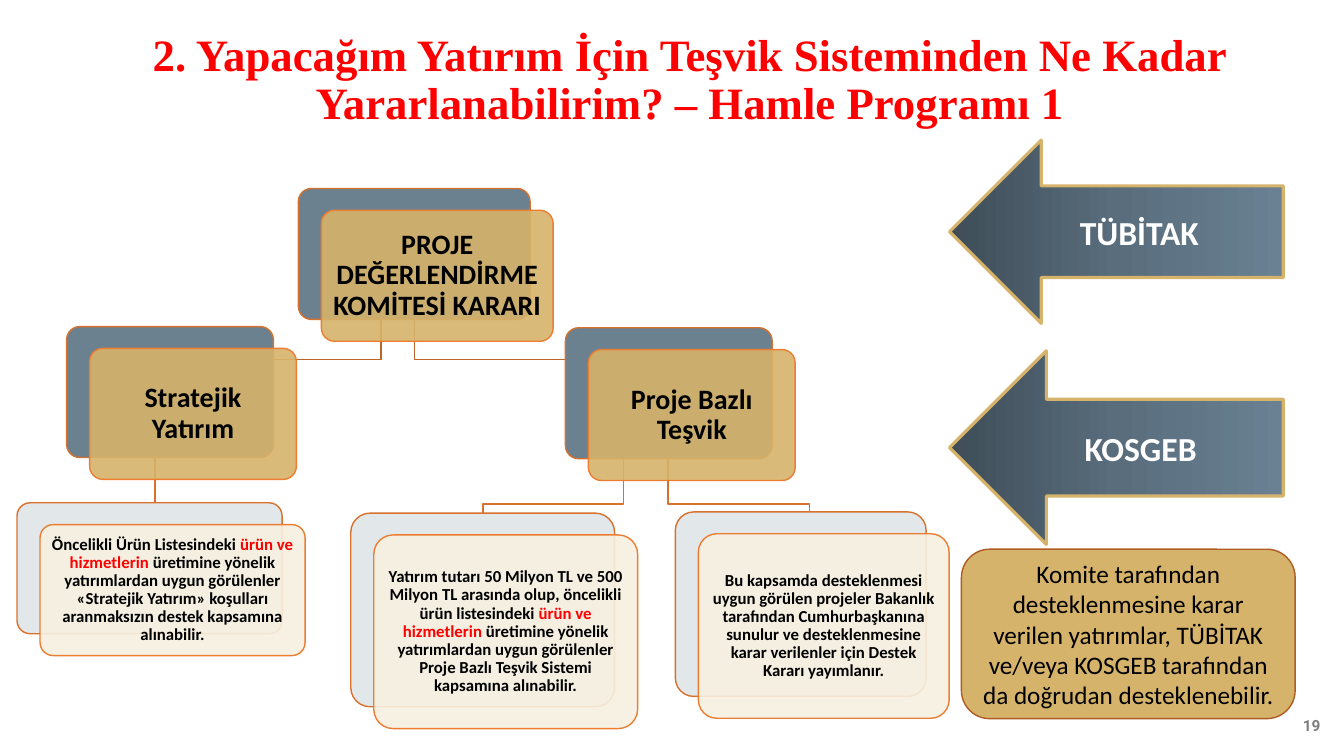
import copy
import pptx
import pptx.dml.color
import pptx.enum.shapes
import pptx.enum.text
import pptx.oxml
import pptx.oxml.ns
import pptx.util

Cm, Pt = pptx.util.Cm, pptx.util.Pt
Shape = pptx.enum.shapes.MSO_SHAPE
Align = pptx.enum.text.PP_ALIGN


class Theme:
    title_font, body_font, number_font = "Times New Roman", "Calibri", "Roboto"
    title_size, arrow_size, heading_size = 32, 24, 20
    note_size, detail_size, number_size = 18, 12, 11
    black, white, red, grey = "000000", "FFFFFF", "FF0000", "7F7F7F"
    slate, gold, pale_slate, cream = "6C8190", "D6B36A", "E2E7EA", "F7F0E1"
    back_line, front_line, note_line = "D7712C", "ED7D31", "AF5C24"
    root_link, branch_link = "BE6427", "D7712C"
    arrow_stops = [(0, "3E4D57"), (0.5, "596D7C"), (1, "698193")]


# Content: lengths in cm, boxes as left, top, width, height
TITLE = "2. Yapacağım Yatırım İçin Teşvik Sisteminden Ne Kadar Yararlanabilirim? – Hamle Programı 1"
PAGE_NUMBER = "19"
HIGHLIGHT = ("ürün ve hizmetlerin ", Theme.red)
HEADINGS = [
    ((7.52, 4.75, 5.84, 3.3), ["PROJE DEĞERLENDİRME KOMİTESİ KARARI"]),
    ((1.68, 8.23, 5.21, 3.3), ["Stratejik Yatırım"]),
    ((14.25, 8.26, 5.21, 3.3), ["Proje Bazlı Teşvik"]),
]
DETAILS = [
    ((0.43, 12.67, 6.68, 3.3), [
        "Öncelikli Ürün Listesindeki ", HIGHLIGHT,
        "üretimine yönelik yatırımlardan uygun görülenler «Stratejik Yatırım» "
        "koşulları aranmaksızın destek kapsamına alınabilir."]),
    ((8.84, 12.93, 6.65, 4.88), [
        "Yatırım tutarı 50 Milyon TL ve 500 Milyon TL arasında olup, öncelikli ürün listesindeki ",
        HIGHLIGHT,
        "üretimine yönelik yatırımlardan uygun görülenler Proje Bazlı Teşvik "
        "Sistemi kapsamına alınabilir."]),
    ((17.02, 12.9, 6.32, 4.65), [
        "Bu kapsamda desteklenmesi uygun görülen projeler Bakanlık tarafından "
        "Cumhurbaşkanına sunulur ve desteklenmesine karar verilenler için "
        "Destek Kararı yayımlanır."]),
]
# Links: start x, end x, start y, colour
LINKS = [
    (16.84, 20.4, 11.56, Theme.branch_link),
    (15.72, 12.17, 11.56, Theme.branch_link),
    (10.44, 15.75, 7.92, Theme.root_link),
    (9.6, 4.27, 7.92, Theme.root_link),
]
LINK_DROP, LINK_END = 1.14, 1.7
STRAIGHT_LINK = (3.91, 11.53, 3.91, 12.7)
CARD_SHIFT_X, CARD_SHIFT_Y = 0.58, 0.55
ARROWS = [
    ((23.93, 3.53, 8.41, 4.62), "TÜBİTAK"),
    ((23.93, 8.84, 8.41, 4.88), "KOSGEB"),
]
NOTE_PLACE = (24.23, 13.84, 8.41, 4.27)
NOTE = ("Komite tarafından desteklenmesine karar verilen yatırımlar, TÜBİTAK "
        "ve/veya KOSGEB tarafından da doğrudan desteklenebilir.")


def rgb(code):
    return pptx.dml.color.RGBColor.from_string(code)


def write(shape, pieces, size, color=Theme.black, font=Theme.body_font, bold=True,
          align=Align.CENTER, spacing=None, inset=None):
    """Write plain strings or (string, colour) pairs as one paragraph."""
    frame = shape.text_frame
    frame.word_wrap = True
    frame.vertical_anchor = pptx.enum.text.MSO_ANCHOR.MIDDLE
    if inset is not None:
        frame.margin_left = frame.margin_right = Cm(inset)
        frame.margin_top = frame.margin_bottom = Cm(inset)
    para = frame.paragraphs[0]
    para.alignment = align
    if spacing:
        para.line_spacing = spacing
    for piece in pieces:
        words, tint = (piece, color) if isinstance(piece, str) else piece
        span = para.add_run()
        span.text = words
        span.font.name, span.font.size, span.font.bold = font, Pt(size), bold
        span.font.color.rgb = rgb(tint)


def add_box(page, kind, place, line, fill=None, weight=1, corner=None):
    box = page.shapes.add_shape(kind, *map(Cm, place))
    box.shadow.inherit = False
    if fill:
        box.fill.solid()
        box.fill.fore_color.rgb = rgb(fill)
    box.line.color.rgb = rgb(line)
    box.line.width = Pt(weight)
    if corner:
        box.adjustments[0] = corner
    return box


def add_card(page, place, pieces, back, front, size, inset):
    left, top, width, height = place
    add_box(page, Shape.ROUNDED_RECTANGLE, place, Theme.back_line, back, corner=0.1)
    box = add_box(page, Shape.ROUNDED_RECTANGLE,
                  (left + CARD_SHIFT_X, top + CARD_SHIFT_Y, width, height),
                  Theme.front_line, front, corner=0.1)
    tint = box.fill._xPr.find(".//" + pptx.oxml.ns.qn("a:srgbClr"))
    alpha = pptx.oxml.parse_xml("<a:alpha %s val='90000'/>" % pptx.oxml.ns.nsdecls("a"))
    tint.append(alpha)
    write(box, pieces, size, spacing=0.9, inset=inset)


def add_link(page, start_x, end_x, start_y, color):
    bend_y, end_y = start_y + LINK_DROP, start_y + LINK_END
    builder = page.shapes.build_freeform(Cm(start_x), Cm(start_y))
    corners = [(start_x, bend_y), (end_x, bend_y), (end_x, end_y)]
    builder.add_line_segments([(Cm(x), Cm(y)) for x, y in corners], close=False)
    link = builder.convert_to_shape()
    link.shadow.inherit = False
    link.fill.background()
    link.line.color.rgb = rgb(color)
    link.line.width = Pt(1)


def add_arrow(page, place, label):
    arrow = add_box(page, Shape.LEFT_ARROW, place, Theme.gold, weight=2.25)
    arrow.fill.gradient()
    arrow.fill.gradient_angle = 0
    first = arrow._element.spPr.find(".//" + pptx.oxml.ns.qn("a:gs"))
    first.addnext(copy.deepcopy(first))
    for stop, (position, color) in zip(arrow.fill.gradient_stops, Theme.arrow_stops):
        stop.position = position
        stop.color.rgb = rgb(color)
    write(arrow, [label], Theme.arrow_size, Theme.white)


def main():
    deck = pptx.Presentation()
    deck.slide_width, deck.slide_height = Cm(33.87), Cm(19.05)
    page = deck.slides.add_slide(deck.slide_layouts[5])

    # Title and page number
    title = page.shapes.title
    title.left, title.top, title.width, title.height = map(Cm, (2.34, 1.02, 30.1, 2.03))
    write(title, [TITLE], Theme.title_size, Theme.red, Theme.title_font, spacing=0.9)
    number = page.shapes.add_textbox(*map(Cm, (32.44, 17.96, 1.09, 0.64)))
    write(number, [PAGE_NUMBER], Theme.number_size, Theme.grey, Theme.number_font,
          align=Align.RIGHT)

    # Links behind the cards
    for link in LINKS:
        add_link(page, *link)
    straight = page.shapes.add_connector(
        pptx.enum.shapes.MSO_CONNECTOR.STRAIGHT, *map(Cm, STRAIGHT_LINK))
    straight.line.color.rgb = rgb(Theme.branch_link)
    straight.line.width = Pt(1)
    straight._element.spPr.append(
        pptx.oxml.parse_xml("<a:effectLst %s/>" % pptx.oxml.ns.nsdecls("a")))

    # Decision tree
    for place, pieces in HEADINGS:
        add_card(page, place, pieces, Theme.slate, Theme.gold, Theme.heading_size, 0.2)
    for place, pieces in DETAILS:
        add_card(page, place, pieces, Theme.pale_slate, Theme.cream, Theme.detail_size, 0.13)

    # Supporting bodies and note
    for place, label in ARROWS:
        add_arrow(page, place, label)
    note = add_box(page, Shape.ROUNDED_RECTANGLE, NOTE_PLACE, Theme.note_line, Theme.gold)
    write(note, [NOTE], Theme.note_size, bold=False)

    deck.save("out.pptx")


if __name__ == "__main__":
    main()
